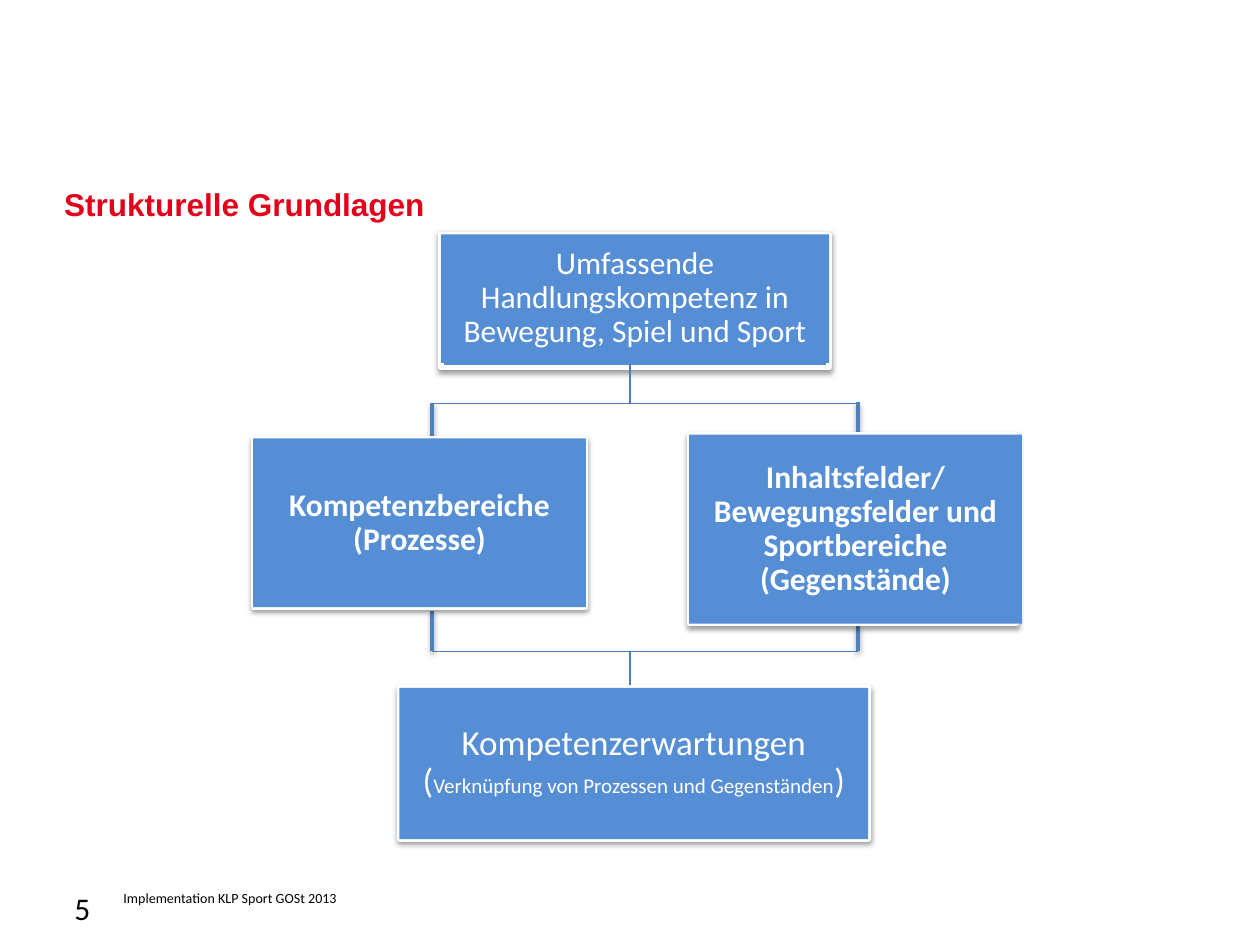
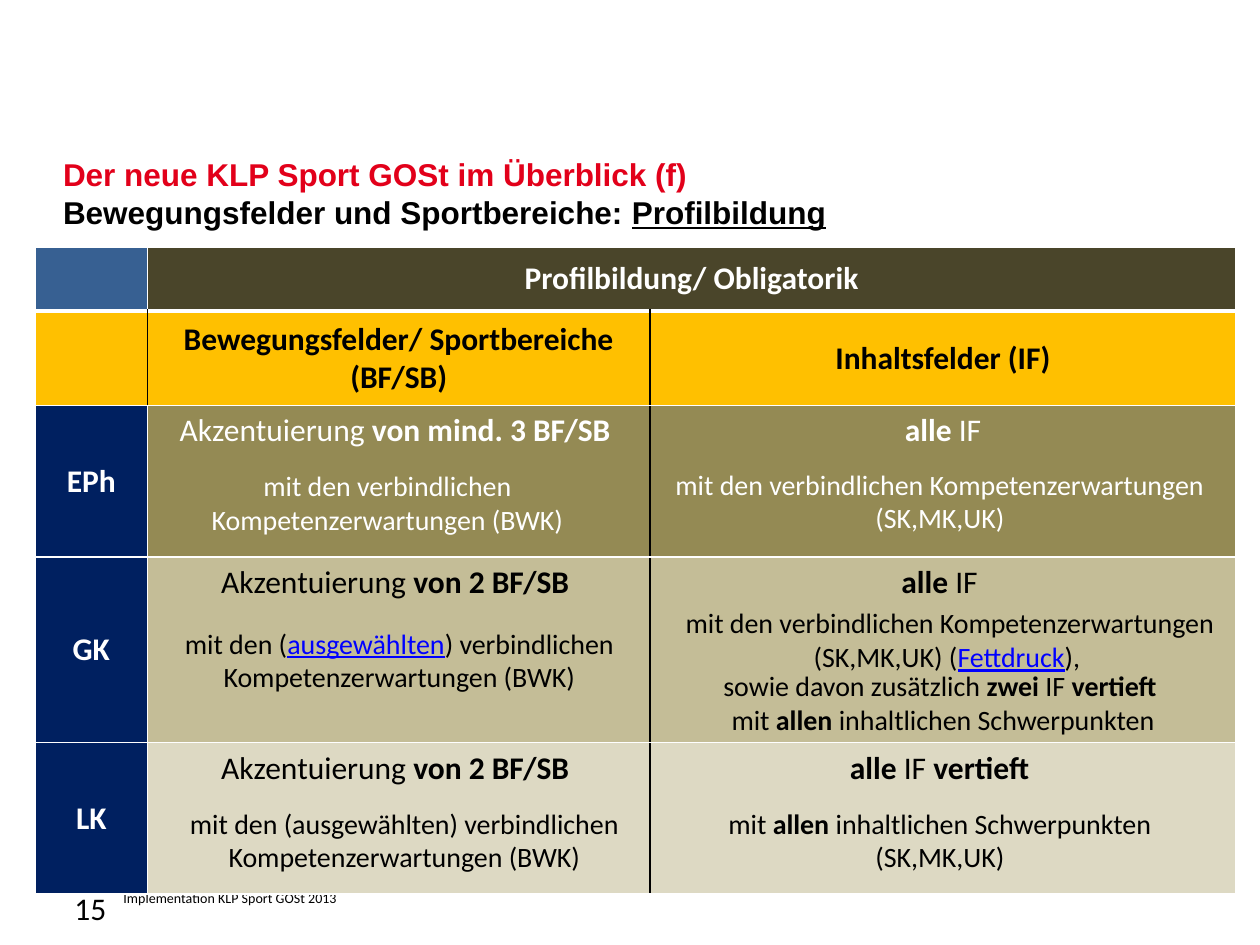
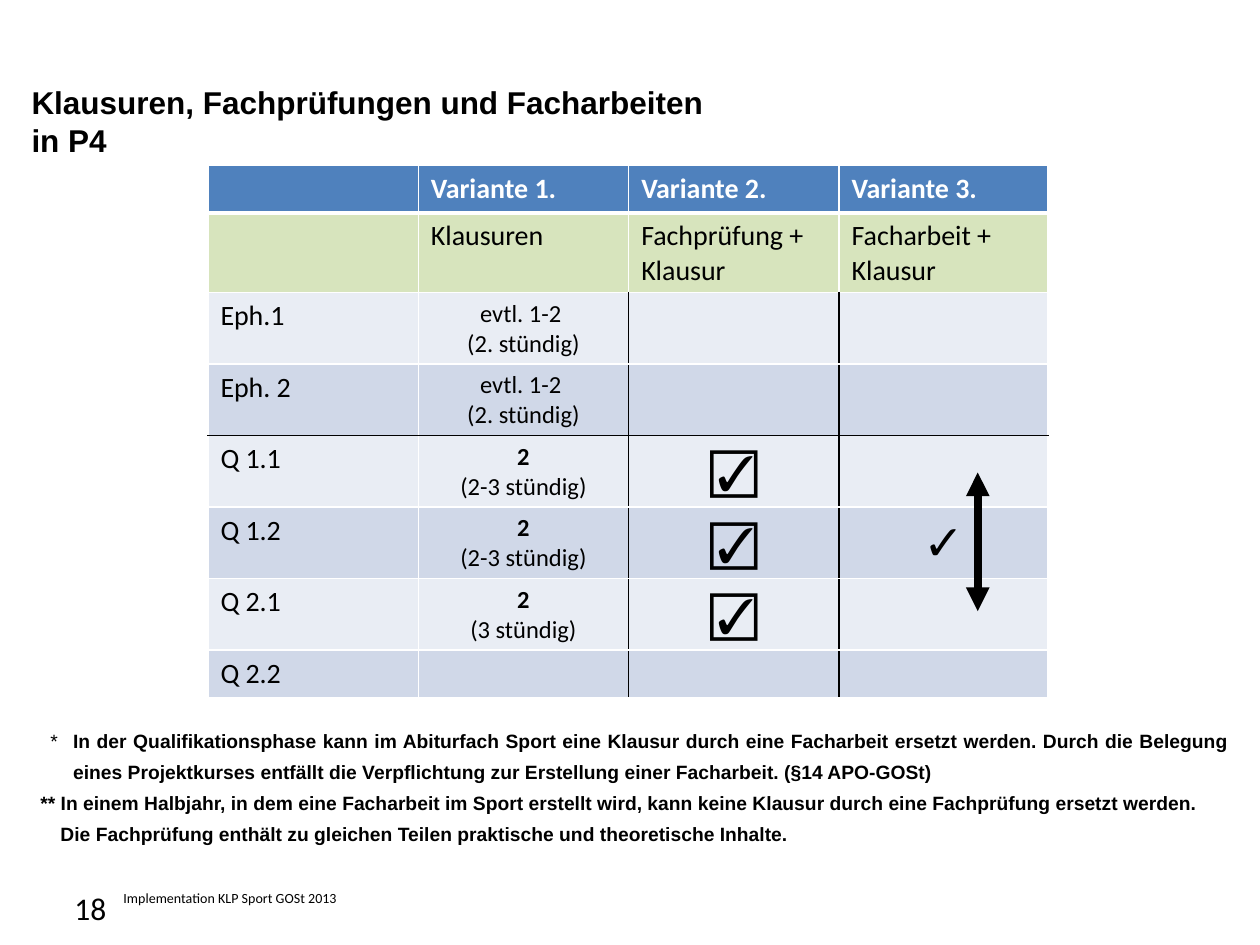
from dataclasses import dataclass
from lxml.etree import SubElement as Sub
from pptx import Presentation
from pptx.dml.color import RGBColor as RGB
from pptx.enum.shapes import MSO_CONNECTOR as Conn, MSO_SHAPE as Form
from pptx.enum.text import MSO_ANCHOR as Anchor, PP_ALIGN as Align
from pptx.oxml.ns import qn
from pptx.util import Emu, Pt


@dataclass(frozen=True)
class Theme:
    black: str = "000000"
    white: str = "FFFFFF"
    red: str = "E2001A"
    link: str = "0000FF"
    box: str = "558ED5"
    thick: str = "4F81BD"
    thin: str = "4B7EBC"
    steel: str = "376092"
    olive: str = "4A452A"
    gold: str = "FFC000"
    navy: str = "002060"
    khaki: str = "948A54"
    sand: str = "C4BD97"
    cream: str = "DDD9C3"
    green: str = "D7E4BD"
    pale: str = "E9EDF4"
    mist: str = "D0D8E8"
    head: str = "Arial"
    body: str = "Calibri"
    big: int = 20
    main: int = 18
    mid: int = 16
    low: int = 14
    small: int = 12
    note: int = 11
    foot: int = 8
    mark: int = 28


T = Theme()
PX = 9144  # 100 px to the inch
BOLD, LINK = {"b": True}, {"c": T.link, "u": True}

# Content: a paragraph is a string or a list of runs; a run is a string or (text, style)
FOOT = "Implementation KLP Sport GOSt 2013"

# Slide 1: text, size, bold, outer x y w h, inner w h
BOXES = [
    (["Umfassende Handlungskompetenz in Bewegung, Spiel und Sport"],
     T.main, False, (350, 186, 308, 106), (308, 102)),
    (["Kompetenzbereiche (Prozesse)"],
     T.main, True, (201, 348, 264, 134), (264, 134)),
    (["Inhaltsfelder/ Bewegungsfelder und Sportbereiche (Gegenstände)"],
     T.main, True, (547, 345, 260, 150), (264, 150)),
    ([["Kompetenzerwartungen (",
       ("Verknüpfung von Prozessen und Gegenständen", {"s": T.small}), ")"]],
     T.big, False, (317, 546, 372, 120), (372, 120)),
]
LEFT, MID, RIGHT, UPPER, LOWER = 343, 500, 681, 320, 517
LEGS = [(RIGHT, 497, RIGHT, LOWER), (LEFT, 485, LEFT, LOWER),
        (LEFT, UPPER, LEFT, 351), (RIGHT, 319, RIGHT, 347)]
JOINS = [(LEFT, LOWER, RIGHT, LOWER), (MID, LOWER, MID, 548)]
TOPS = [(LEFT, UPPER, RIGHT, UPPER), (MID, 289, MID, UPPER)]

# Slide 2
PROFILE = [
    ([], ["Profilbildung/ Obligatorik"], []),
    ([], ["Bewegungsfelder/ Sportbereiche (BF/SB)"], ["Inhaltsfelder (IF)"]),
    (["EPh"], [["Akzentuierung ", ("von mind. 3 BF/SB ", BOLD)]],
     [[("alle ", BOLD), "IF"]]),
    (["GK"], [["Akzentuierung ", ("von 2 BF/SB ", BOLD)]],
     [[("alle ", BOLD), "IF "],
      [("sowie davon zusätzlich ", {"s": T.mid}), ("zwei", {"s": T.mid, "b": True}),
       (" IF ", {"s": T.mid}), ("vertieft ", {"s": T.mid, "b": True})],
      [("mit ", {"s": T.mid}), ("allen", {"s": T.mid, "b": True}),
       (" inhaltlichen Schwerpunkten", {"s": T.mid})]]),
    (["LK"], [["Akzentuierung ", ("von 2 BF/SB ", BOLD)]],
     [[("alle", BOLD), " IF ", ("vertieft ", BOLD)]]),
]
TONES = [(T.steel, T.olive), (T.gold, T.gold), (T.navy, T.khaki),
         (T.navy, T.sand), (T.navy, T.cream)]
DETAILS = [
    (100, 367, 415, T.white, ["mit den verbindlichen Kompetenzerwartungen (BWK)"]),
    (67, 492, 500, T.black, [["mit den (", ("ausgewählten", LINK),
                              ") verbindlichen Kompetenzerwartungen (BWK)"]]),
    (71, 635, 500, T.black,
     ["mit den (ausgewählten) verbindlichen Kompetenzerwartungen (BWK)"]),
    (496, 366, 500, T.white, ["mit den verbindlichen Kompetenzerwartungen", "(SK,MK,UK)"]),
    (504, 476, 500, T.black, [["mit den verbindlichen Kompetenzerwartungen (SK,MK,UK) (",
                               ("Fettdruck", LINK), "), "]]),
    (496, 635, 500, T.black, [["mit ", ("allen", BOLD), " inhaltlichen Schwerpunkten"],
                              "(SK,MK,UK)"]),
]

# Slide 3
EXAMS = [
    ("", ["Variante 1."], ["Variante 2."], ["Variante 3."]),
    ("", ["Klausuren"], ["Fachprüfung + Klausur"], ["Facharbeit + Klausur"]),
    ("Eph.1", ["evtl. 1-2 ", "(2. stündig)"], [], []),
    ("Eph. 2", ["evtl. 1-2 ", "(2. stündig)"], [], []),
    ("Q 1.1", [[("2", BOLD)], "(2-3 stündig)"], ["☑"], []),
    ("Q 1.2", [[("2", BOLD)], "(2-3 stündig)"], ["☑"], ["✓"]),
    ("Q 2.1", [[("2", BOLD)], "(3 stündig)"], ["☑"], []),
    ("Q 2.2", [], [], []),
]
# Text, left margin, first line indent
NOTES = [
    ([("*\t", {"b": False}), "In der Qualifikationsphase kann im Abiturfach Sport eine "
      "Klausur durch eine Facharbeit ersetzt werden. Durch die Belegung eines "
      "Projektkurses entfällt die Verpflichtung zur Erstellung einer Facharbeit. "
      "(§14 APO-GOSt)"], 31, -18),
    ("** In einem Halbjahr, in dem eine Facharbeit im Sport erstellt wird, kann keine "
     "Klausur durch eine Fachprüfung ersetzt werden.", 5, 0),
    ("Die Fachprüfung enthält zu gleichen Teilen praktische und theoretische Inhalte.",
     21, 0),
]


def px(*vals):
    return [Emu(v * PX) for v in vals]


def hue(text):
    return RGB.from_string(text)


# Text
def put(frame, paras, size, color=T.black, bold=False, font=T.body,
        align=Align.LEFT, space=None):
    for i, para in enumerate(paras):
        p = frame.paragraphs[0] if i == 0 else frame.add_paragraph()
        p.alignment = align
        if space:
            p.line_spacing = space
        for part in [para] if isinstance(para, str) else para:
            text, look = (part, {}) if isinstance(part, str) else part
            run = p.add_run()
            run.text = text
            f = run.font
            f.name, f.size = font, Pt(look.get("s", size))
            f.bold = look.get("b", bold)
            f.underline = look.get("u", False)
            f.color.rgb = hue(look.get("c", color))
    if not paras:
        Sub(frame.paragraphs[0]._p, qn("a:endParaRPr"), sz=str(size * 100))


def pad(item, x, y):
    item.margin_left = item.margin_right = Emu(x * PX)
    item.margin_top = item.margin_bottom = Emu(y * PX)


def label(slide, rect, paras, size, inset=(0, 0), **look):
    frame = slide.shapes.add_textbox(*px(*rect)).text_frame
    frame.word_wrap = True
    pad(frame, *inset)
    put(frame, paras, size, **look)
    return frame


def title(slide, x, y, paras, color=T.black):
    label(slide, (x, y + 16, 882, 60), paras, T.main, color=color, bold=True,
          font=T.head)


def strip(slide, x, y, w, h, text, size):
    """A footer part: a plain outline that holds one line of text."""
    pen = slide.shapes.build_freeform(x, y, scale=PX)
    pen.add_line_segments([(x + w, y), (x + w, y + h), (x, y + h)])
    shape = pen.convert_to_shape()
    shape.shadow.inherit = False
    shape.fill.background()
    shape.line.fill.background()
    frame = shape.text_frame
    frame.word_wrap = True
    frame.vertical_anchor = Anchor.TOP
    pad(frame, 0, 0)
    put(frame, [text], size)


def page(deck, num):
    slide = deck.slides.add_slide(deck.slide_layouts[6])
    strip(slide, 59, 706, 32, 37, num, T.main)
    strip(slide, 98, 706, 228, 37, FOOT, T.foot)
    return slide


# Shapes and lines
def cast(effects):
    shade = Sub(effects, qn("a:outerShdw"), blurRad="39370", dist="20320",
                dir="5400000", rotWithShape="0")
    tint = Sub(shade, qn("a:srgbClr"), val=T.black)
    Sub(tint, qn("a:alpha"), val="38000")


def line(slide, ends, color, width, shadow=False, arrows=False):
    wire = slide.shapes.add_connector(Conn.STRAIGHT, *px(*ends))
    wire.line.color.rgb = hue(color)
    wire.line.width = Pt(width)
    if arrows:
        for end in ("a:headEnd", "a:tailEnd"):
            Sub(wire.line._get_or_add_ln(), qn(end), type="triangle")
    effects = Sub(wire._element.spPr, qn("a:effectLst"))
    if shadow:
        cast(effects)


def block(group, rect, edge=False):
    shape = group.shapes.add_shape(Form.RECTANGLE, *px(*rect))
    shape.shadow.inherit = False
    shape.fill.solid()
    shape.fill.fore_color.rgb = hue(T.box)
    if edge:
        shape.line.color.rgb = hue(T.white)
        shape.line.width = Pt(3)
        cast(shape._element.spPr.find(qn("a:effectLst")))
    else:
        shape.line.fill.background()
    return shape


def card(slide, paras, size, bold, outer, inner):
    group = slide.shapes.add_group_shape()
    block(group, outer, edge=True)
    frame = block(group, outer[:2] + inner).text_frame
    frame.word_wrap = True
    frame.vertical_anchor = Anchor.MIDDLE
    pad(frame, 1, 1)
    put(frame, paras, size, T.white, bold, align=Align.CENTER, space=0.9)


# Tables
def grid(slide, x, y, cols, rows):
    table = slide.shapes.add_table(len(rows), len(cols),
                                   *px(x, y, sum(cols), sum(rows))).table
    for col, w in zip(table.columns, cols):
        col.width = Emu(w * PX)
    for row, h in zip(table.rows, rows):
        row.height = Emu(h * PX)
    return table


def paint(cell, fill, dark, heavy):
    """Draw the edges, black on the sides in dark, then the fill."""
    props = cell._tc.get_or_add_tcPr()
    for side in "LRTB":
        width = 3 if heavy and side == "B" else 1
        ln = Sub(props, qn(f"a:ln{side}"), w=str(Pt(width)))
        solid = Sub(ln, qn("a:solidFill"))
        Sub(solid, qn("a:srgbClr"), val=T.black if side in dark else T.white)
    cell.fill.solid()
    cell.fill.fore_color.rgb = hue(fill)


def structure(deck):
    slide = page(deck, "5")
    title(slide, 51, 131, ["Strukturelle Grundlagen"], T.red)
    for ends in LEGS:
        line(slide, ends, T.thick, 2, shadow=True)
    for ends in JOINS:
        line(slide, ends, T.thin, 0.75)
    for box in BOXES:
        card(slide, *box)
    for ends in TOPS:
        line(slide, ends, T.thin, 0.75)


def profile(deck):
    slide = page(deck, "15")
    title(slide, 50, 107, [
        [("Der neue KLP Sport GOSt im Überblick (f)", {"c": T.red})],
        ["Bewegungsfelder und Sportbereiche: ", ("Profilbildung", {"u": True})]])
    table = grid(slide, 28, 196, (89, 399, 465), (51, 75, 120, 146, 120))
    for r, row in enumerate(PROFILE):
        for c, paras in enumerate(row):
            cell = table.cell(r, c)
            dark = ""
            if r == 1:
                dark = ("R", "LR", "L")[c]
            elif r > 1:
                dark = ("", "R", "L")[c]
            paint(cell, TONES[r][c > 0], dark, r == 0)
            pad(cell, 5, 5)
            if r < 2 or c == 0 or len(paras) > 1:
                cell.vertical_anchor = Anchor.MIDDLE
            light = r in (0, 2) or (c == 0 and r > 1)
            put(cell.text_frame, paras, T.main, T.white if light else T.black,
                r < 2 or c == 0, align=Align.CENTER)
            if len(paras) > 1:
                cell.text_frame.paragraphs[1].space_before = Pt(39)
    table.cell(0, 1).merge(table.cell(0, 2))
    for x, y, w, color, paras in DETAILS:
        label(slide, (x, y, w, 64), paras, T.mid, (10, 5), color=color,
              align=Align.CENTER)


def exams(deck):
    slide = page(deck, "18")
    frame = label(slide, (27, 572, 949, 100), [n[0] for n in NOTES], T.note, bold=True,
                  font=T.head, align=Align.JUSTIFY, space=1.35)
    for p, (_, left, first) in zip(frame.paragraphs, NOTES):
        props = p._p.get_or_add_pPr()
        props.set("marL", str(left * PX))
        props.set("indent", str(first * PX))
    title(slide, 25, 50, ["Klausuren, Fachprüfungen und Facharbeiten", "in P4"])
    table = grid(slide, 165, 131, [167] * 3 + [166], [38, 62] + [56] * 5 + [38])
    for r, (term, *rest) in enumerate(EXAMS):
        for c, paras in enumerate([[term] if term else [], *rest]):
            cell = table.cell(r, c)
            dark = ("", "R", "LR", "L")[c] if r > 1 else ""
            dark += {3: "B", 4: "T"}.get(r, "")
            fill = (T.thick, T.green)[r] if r < 2 else (T.pale, T.mist)[r % 2]
            paint(cell, fill, dark, r == 0)
            inner = r > 1 and c > 0 and paras
            size = (T.low if c == 1 else T.mark) if inner else T.mid
            put(cell.text_frame, paras, size, T.black if r else T.white, r == 0,
                align=Align.CENTER if inner else Align.LEFT)
    line(slide, (776, 485, 776, 375), T.black, 4.5, arrows=True)


def main():
    deck = Presentation()
    deck.slide_width, deck.slide_height = px(1000, 750)
    structure(deck)
    profile(deck)
    exams(deck)
    deck.save("out.pptx")


if __name__ == "__main__":
    main()
